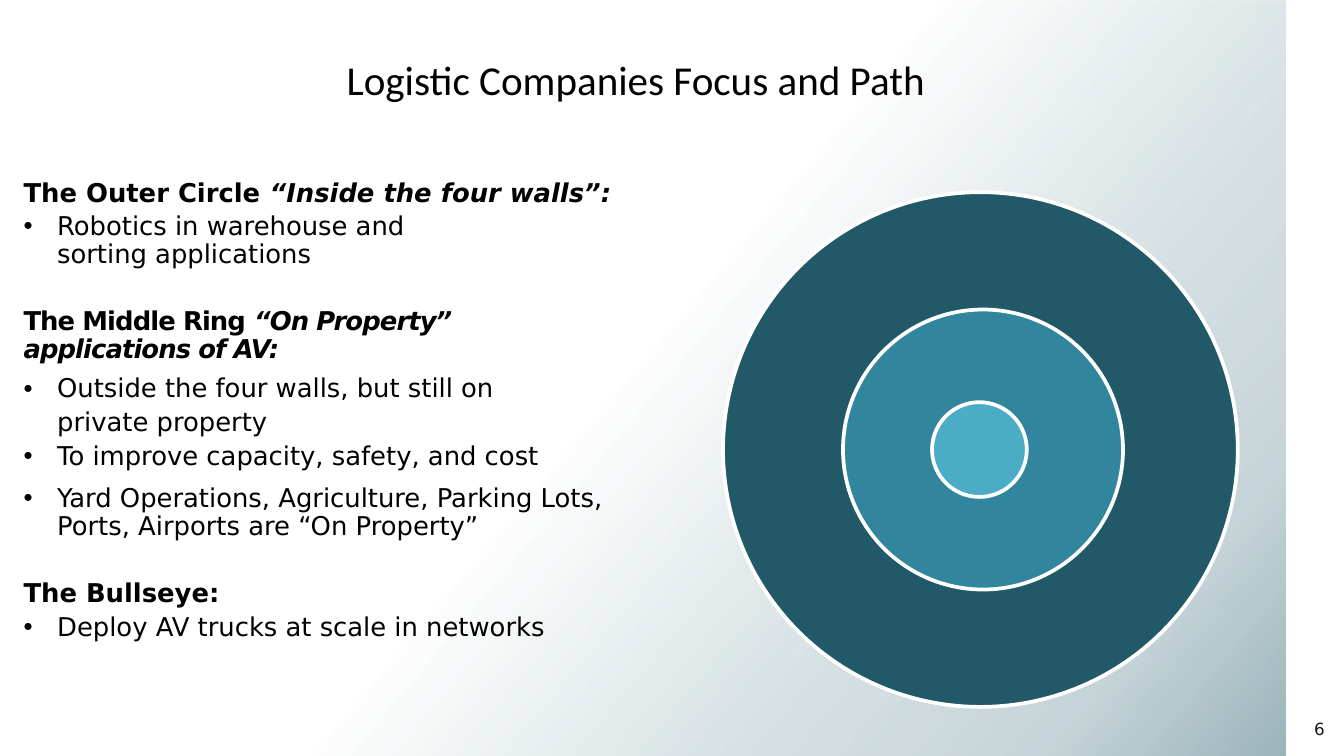
from lxml import etree
from pptx import Presentation
from pptx.dml.color import RGBColor
from pptx.enum.shapes import MSO_SHAPE
from pptx.enum.text import MSO_ANCHOR, MSO_AUTO_SIZE, PP_ALIGN
from pptx.oxml.ns import qn
from pptx.util import Inches, Pt

RECTANGLE, OVAL = MSO_SHAPE.RECTANGLE, MSO_SHAPE.OVAL
TOP, MIDDLE = MSO_ANCHOR.TOP, MSO_ANCHOR.MIDDLE
LEFT, CENTER = PP_ALIGN.LEFT, PP_ALIGN.CENTER
NO_FIT = MSO_AUTO_SIZE.NONE

WIDTH, HEIGHT = 20, 11.25
COLORS = {"text": "000000", "number": "161719", "outline": "FFFFFF",
          "outer": "215968", "middle": "31859C", "center": "4BACC6"}
GRADIENT_STOPS = [(49, 0), (69, 16), (87, 25), (100, 45)]
GRADIENT_ANGLE = 40

# kind, spans (text, italic), space before, space after
PARAGRAPHS = [
    ("heading", [("The Outer Circle ", False), ("“Inside the four walls”:", True)], 0, 6),
    ("bullet", [("Robotics in warehouse and\vsorting applications", False)], 0, 32),
    ("tight heading", [("The Middle Ring ", False),
                       ("“On Property”\vapplications of AV:", True)], 10, 12),
    ("bullet", [("Outside the four walls, but still on", False)], 0, 6),
    ("continued", [("private property", False)], 0, 6),
    ("bullet", [("To improve capacity, safety, and cost", False)], 0, 6),
    ("bullet", [("Yard Operations, Agriculture, Parking Lots,\v"
                 "Ports, Airports are “On Property”", False)], 10, 32),
    ("heading", [("The Bullseye:", False)], 10, 6),
    ("bullet", [("Deploy AV trucks at scale in networks", False)], 0, 24),
]
# color, diameter and center offset as shares of the target's width
RINGS = [("outer", 1, 0), ("middle", 0.544, 0.005), ("center", 0.184, -0.002)]


def set_values(item, values):
    """Set each attribute of an object from a dict."""
    for name, value in values.items():
        setattr(item, name, value)


def place(shape, box):
    """Move a shape to a box given in inches."""
    names = ("left", "top", "width", "height")
    set_values(shape, dict(zip(names, map(Inches, box))))


def style_font(font, color, **values):
    """Apply a color and other format values to a font."""
    font.color.rgb = RGBColor.from_string(COLORS[color])
    set_values(font, values)


def add_backdrop(page, box):
    """Draw the panel that fades from clear to teal."""
    panel = page.shapes.add_shape(RECTANGLE, *map(Inches, box))
    panel.shadow.inherit = False
    panel.line.fill.background()
    panel.fill.gradient()
    panel.fill.gradient_angle = 360 - GRADIENT_ANGLE
    stops = panel._element.spPr.find(qn("a:gradFill")).find(qn("a:gsLst"))
    for stop in list(stops):
        stops.remove(stop)
    for position, opacity in GRADIENT_STOPS:
        stop = etree.SubElement(stops, qn("a:gs"), pos=str(position * 1000))
        color = etree.SubElement(stop, qn("a:srgbClr"), val=COLORS["outer"])
        etree.SubElement(color, qn("a:alpha"), val=str(opacity * 1000))


def fill_title(title, box):
    """Place and format the slide title."""
    place(title, box)
    title.text_frame.text = "Logistic Companies Focus and Path"
    set_values(title.text_frame, {"vertical_anchor": MIDDLE, "auto_size": NO_FIT,
                                  "word_wrap": True})
    para = title.text_frame.paragraphs[0]
    para.alignment = CENTER
    style_font(para.runs[0].font, "text", name="Calibri", size=Pt(44), bold=False)


def set_bullet(para, kind):
    """Set the indent and bullet that suit a kind of paragraph."""
    properties = para._p.get_or_add_pPr()
    margin = 0 if "heading" in kind else Inches(0.5)
    properties.set("marL", str(margin))
    properties.set("indent", str(-margin if kind == "bullet" else 0))
    if kind == "bullet":
        etree.SubElement(properties, qn("a:buChar"), char="•")
    else:
        etree.SubElement(properties, qn("a:buNone"))


def add_span(para, text, kind, italic):
    """Add text to a paragraph, with line breaks at vertical tabs."""
    for index, line in enumerate(text.split("\v")):
        if index:
            para.add_line_break()
        span = para.add_run()
        span.text = line
        style_font(span.font, "text", name="DejaVu Sans", size=Pt(27.7),
                   bold="heading" in kind, italic=italic)
        if kind == "tight heading":
            span._r.get_or_add_rPr().set("spc", "-100")


def fill_body(body, box):
    """Place the body and write its headings and bullets."""
    place(body, box)
    frame = body.text_frame
    set_values(frame, {"margin_left": 0, "margin_top": 0, "margin_right": 0,
                       "margin_bottom": 0, "vertical_anchor": TOP,
                       "auto_size": NO_FIT, "word_wrap": True})
    for index, (kind, spans, before, after) in enumerate(PARAGRAPHS):
        para = frame.add_paragraph() if index else frame.paragraphs[0]
        set_bullet(para, kind)
        set_values(para, {"alignment": LEFT, "line_spacing": 0.9,
                          "space_before": Pt(before), "space_after": Pt(after)})
        style_font(para.font, "text", name="DejaVu Sans", size=Pt(27.7))
        for text, italic in spans:
            add_span(para, text, kind, italic)


def add_target(page, box):
    """Draw the nested circles as one group."""
    left, top, width, height = box
    group = page.shapes.add_group_shape()
    for color, share, offset in RINGS:
        size = share * width
        x = left + (width - size) / 2 + offset * width
        y = top + (height - size) / 2
        ring = group.shapes.add_shape(OVAL, *map(Inches, (x, y, size, size)))
        ring.shadow.inherit = False
        ring.fill.solid()
        ring.fill.fore_color.rgb = RGBColor.from_string(COLORS[color])
        ring.line.color.rgb = RGBColor.from_string(COLORS["outline"])
        ring.line.width = Pt(4)


def add_page_number(page, box):
    """Write the page number in the corner."""
    number = page.shapes.add_textbox(*map(Inches, box))
    number.text_frame.word_wrap = True
    para = number.text_frame.paragraphs[0]
    para.alignment = CENTER
    span = para.add_run()
    span.text = "6"
    style_font(span.font, "number", name="DejaVu Sans", size=Pt(18))


def main():
    """Build and save the deck."""
    deck = Presentation()
    set_values(deck, {"slide_width": Inches(WIDTH), "slide_height": Inches(HEIGHT)})
    page = deck.slides.add_slide(deck.slide_layouts[1])
    title, body = page.placeholders
    add_backdrop(page, (0.01, 0.01, 19.12, 11.24))
    backdrop = page.shapes[-1]._element
    title._element.addprevious(backdrop)
    fill_title(title, (0.67, 0.57, 17.59, 1.2))
    fill_body(body, (0.35, 2.68, 18.07, 7.66))
    add_page_number(page, (19.28, 10.65, 0.71, 0.6))
    add_target(page, (10.76, 2.86, 7.66, 7.66))
    deck.save("out.pptx")


if __name__ == "__main__":
    main()
